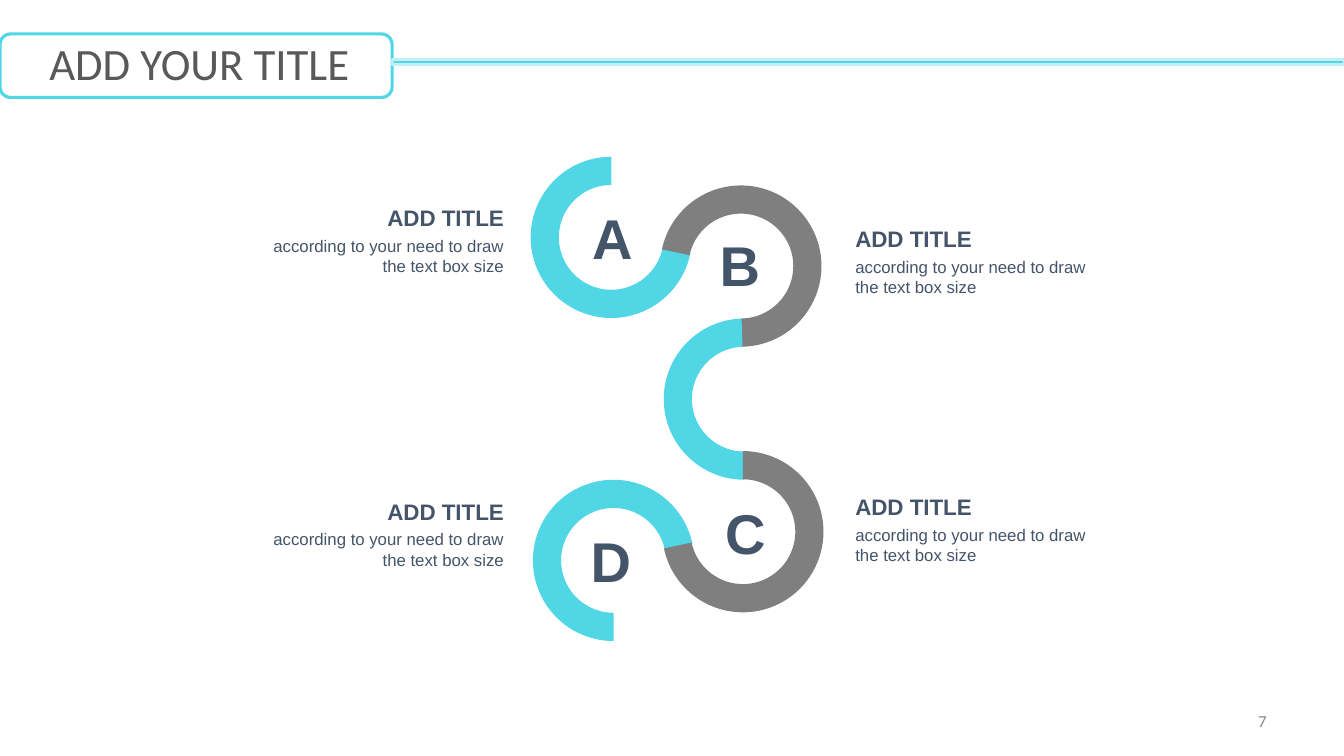
from dataclasses import dataclass

from pptx import Presentation
from pptx.dml.color import RGBColor
from pptx.enum.shapes import MSO_SHAPE
from pptx.enum.text import MSO_ANCHOR, MSO_AUTO_SIZE, PP_ALIGN
from pptx.slide import Slide
from pptx.util import Inches, Pt

# Grid: ten columns and ten rows to the inch
COLUMNS, ROWS = 133.33, 75
CELL = Inches(0.1)

CYAN = RGBColor(0x50, 0xD6, 0xE4)
PALE_CYAN = RGBColor(0xC0, 0xF0, 0xF5)
GREY = RGBColor(0x7F, 0x7F, 0x7F)
SLATE = RGBColor(0x44, 0x54, 0x69)
TITLE_GREY = RGBColor(0x59, 0x59, 0x59)
NUMBER_GREY = RGBColor(0x89, 0x89, 0x89)

ARC_SIZE, ARC_BAND = 16, 2.8
ADJUSTMENT_PER_DEGREE = 0.6

HEADING = "ADD TITLE"
DETAIL = "according to your need to draw the text box size"
HEADING_WIDTH, DETAIL_WIDTH = 21.4, 25.5
DETAIL_DROP = 3.1

LETTER_FONT = {"name": "Arial", "size": Pt(40), "bold": True}
HEADING_FONT = {"name": "Arial", "size": Pt(16), "bold": True}
DETAIL_FONT = {"name": "Arial", "size": Pt(12)}
TITLE_FONT = {"name": "Calibri", "size": Pt(32)}
NUMBER_FONT = {"name": "Calibri", "size": Pt(12)}

FITTED = {"auto_size": MSO_AUTO_SIZE.SHAPE_TO_FIT_TEXT}
SINGLE_LINE = FITTED | {"word_wrap": False}
CAPTION = FITTED | {"word_wrap": True, "margin_left": 0, "margin_right": 0,
                    "margin_top": 0, "margin_bottom": 0}
NUMBER_FRAME = {"word_wrap": True, "vertical_anchor": MSO_ANCHOR.MIDDLE}
LEFT = {"alignment": PP_ALIGN.LEFT}
RIGHT = {"alignment": PP_ALIGN.RIGHT}


@dataclass
class Area:
    column: float
    row: float
    width: float
    height: float

    def lengths(self) -> list[int]:
        return [round(cells * CELL) for cells in
                (self.column, self.row, self.width, self.height)]


@dataclass
class Arc:
    column: float
    row: float
    start: float
    end: float
    color: RGBColor


@dataclass
class Letter:
    text: str
    column: float
    row: float


@dataclass
class Note:
    edge: float
    row: float
    on_left: bool


# Angles run clockwise from the right
ARCS = [
    Arc(52.65, 15.55, 12, 270, CYAN),
    Arc(65.5, 18.4, 192, 90, GREY),
    Arc(65.85, 31.6, 90, 268, CYAN),
    Arc(52.87, 47.6, 90, 348, CYAN),
    Arc(65.7, 44.75, 270, 168, GREY),
]
LETTERS = [
    Letter("A", 57.75, 19.7),
    Letter("B", 70.4, 22.35),
    Letter("C", 70.95, 49),
    Letter("D", 57.6, 51.7),
]
NOTES = [
    Note(50, 20.25, True),
    Note(84.85, 22.35, False),
    Note(84.85, 48.95, False),
    Note(50, 49.4, True),
]


def apply(target: object, values: dict) -> None:
    for name, value in values.items():
        setattr(target, name, value)


def add_text(page: Slide, area: Area, text: str, font: dict, color: RGBColor,
             frame: dict, paragraph: dict) -> None:
    box = page.shapes.add_textbox(*area.lengths())
    apply(box.text_frame, frame)
    para = box.text_frame.paragraphs[0]
    apply(para, paragraph)
    span = para.add_run()
    span.text = text
    apply(span.font, font)
    span.font.color.rgb = color


def add_arc(page: Slide, arc: Arc) -> None:
    area = Area(arc.column, arc.row, ARC_SIZE, ARC_SIZE)
    band = page.shapes.add_shape(MSO_SHAPE.BLOCK_ARC, *area.lengths())
    band.adjustments[0] = arc.start * ADJUSTMENT_PER_DEGREE
    band.adjustments[1] = arc.end * ADJUSTMENT_PER_DEGREE
    band.adjustments[2] = ARC_BAND / ARC_SIZE
    band.shadow.inherit = False
    band.fill.solid()
    band.fill.fore_color.rgb = arc.color
    band.line.fill.background()


def add_bar(page: Slide, area: Area, line: RGBColor, weight: float,
            fill: RGBColor | None = None) -> None:
    bar = page.shapes.add_shape(MSO_SHAPE.ROUNDED_RECTANGLE, *area.lengths())
    bar.shadow.inherit = False
    bar.line.color.rgb = line
    bar.line.width = Pt(weight)
    if fill is None:
        bar.fill.background()
    else:
        bar.fill.solid()
        bar.fill.fore_color.rgb = fill


def add_note(page: Slide, note: Note) -> None:
    side = (RIGHT if note.on_left else LEFT) | {"space_before": Pt(2)}
    lines = [(HEADING, HEADING_WIDTH, 0, 2.7, HEADING_FONT),
             (DETAIL, DETAIL_WIDTH, DETAIL_DROP, 4, DETAIL_FONT)]
    for text, width, drop, height, font in lines:
        column = note.edge - width if note.on_left else note.edge
        area = Area(column, note.row + drop, width, height)
        add_text(page, area, text, font, SLATE, CAPTION, side)


def main() -> None:
    deck = Presentation()
    deck.slide_width = round(COLUMNS * CELL)
    deck.slide_height = ROWS * CELL
    page = deck.slides.add_slide(deck.slide_layouts[6])

    # Page number
    add_text(page, Area(95.55, 69.5, 31.1, 4), "7", NUMBER_FONT, NUMBER_GREY,
             NUMBER_FRAME, RIGHT)

    # Winding band with its letters
    for arc in ARCS:
        add_arc(page, arc)
    for letter in LETTERS:
        add_text(page, Area(letter.column, letter.row, 6.2, 7.7), letter.text,
                 LETTER_FONT, SLATE, SINGLE_LINE, LEFT)

    # Notes beside the band
    for note in NOTES:
        add_note(page, note)

    # Title banner
    add_bar(page, Area(0, 3.37, 38.9, 6.3), CYAN, 2.25)
    add_bar(page, Area(38.9, 5.9, COLUMNS - 38.9, 0.5), PALE_CYAN, 2, CYAN)
    add_text(page, Area(3.9, 3.05, 32.1, 6.4), "ADD YOUR TITLE", TITLE_FONT,
             TITLE_GREY, SINGLE_LINE, LEFT)

    deck.save("out.pptx")


if __name__ == "__main__":
    main()
